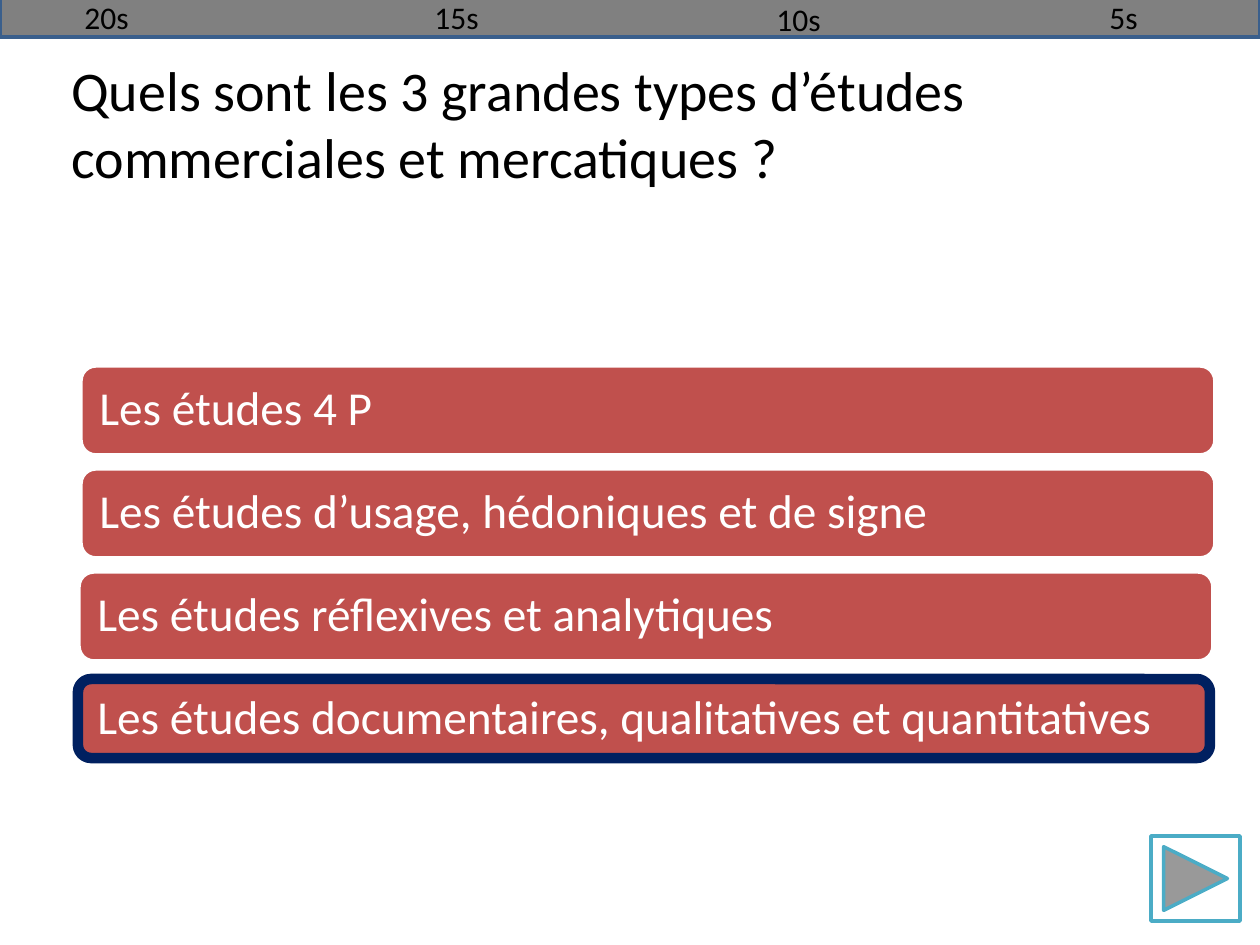
from pptx import Presentation
from pptx.dml.color import RGBColor
from pptx.enum.shapes import MSO_SHAPE
from pptx.enum.text import MSO_ANCHOR, PP_ALIGN
from pptx.util import Emu, Pt

SCALE = 914400 / 126
THEME = {
    "font": "Calibri",
    "text": "000000", "white": "FFFFFF", "answer": "C0504D", "correct": "002060",
    "button": "4BACC6", "bar": "808080", "bar_line": "3A5F8C",
    "question_size": 32, "answer_size": 27, "timer_size": 18,
}


def add_box(page, preset, bounds, fill, line, weight):
    lengths = [Emu(round(value * SCALE)) for value in bounds]
    if preset is None:
        return page.shapes.add_textbox(*lengths)
    box = page.shapes.add_shape(preset, *lengths)
    box.shadow.inherit = False
    if fill:
        box.fill.solid()
        box.fill.fore_color.rgb = RGBColor.from_string(THEME[fill])
    else:
        box.fill.background()
    box.line.color.rgb = RGBColor.from_string(THEME[line])
    box.line.width = Pt(weight)
    return box


def write(box, text, size, color):
    box.text_frame.word_wrap = True
    para = box.text_frame.paragraphs[0]
    para.alignment = PP_ALIGN.LEFT
    span = para.add_run()
    span.text = text
    span.font.name = THEME["font"]
    span.font.size = Pt(THEME[size])
    span.font.color.rgb = RGBColor.from_string(THEME[color])
    return para


deck = Presentation()
deck.slide_width = Emu(round(1260 * SCALE))
deck.slide_height = Emu(round(945 * SCALE))
page = deck.slides.add_slide(deck.slide_layouts[6])

question = add_box(page, None, (59, 49, 1134, 154), None, None, 0)
write(question, "Quels sont les 3 grandes types d’études commerciales et mercatiques ?",
      "question_size", "text")

answers = [
    (81, "Les études 4 P"),
    (81, "Les études d’usage, hédoniques et de signe"),
    (79, "Les études réflexives et analytiques"),
    (79, "Les études documentaires, qualitatives et quantitatives"),
]
for row, (left, text) in enumerate(answers):
    answer = add_box(page, MSO_SHAPE.ROUNDED_RECTANGLE, (left, 366 + 103 * row, 1134, 89),
                     "answer", "white", 2)
    frame = answer.text_frame
    frame.vertical_anchor = MSO_ANCHOR.MIDDLE
    frame.margin_left = frame.margin_right = Emu(round(14 * SCALE))
    para = write(answer, text, "answer_size", "white")
    para.line_spacing = 0.9

add_box(page, MSO_SHAPE.ROUNDED_RECTANGLE, (78, 679, 1132, 79), None, "correct", 6)

next_button = add_box(page, MSO_SHAPE.ACTION_BUTTON_BACK_OR_PREVIOUS, (1151, 836, 89, 85),
                      "white", "button", 2)
next_button.rotation = 180

add_box(page, MSO_SHAPE.RECTANGLE, (0, -2, 1260, 39), "bar", "bar_line", 2)
for left, top, width, text in [(72, -8, 79, "20s"), (422, -8, 79, "15s"),
                               (764, -6, 79, "10s"), (1097, -8, 59, "5s")]:
    timer = add_box(page, None, (left, top, width, 50), None, None, 0)
    write(timer, text, "timer_size", "text")

deck.save("out.pptx")
